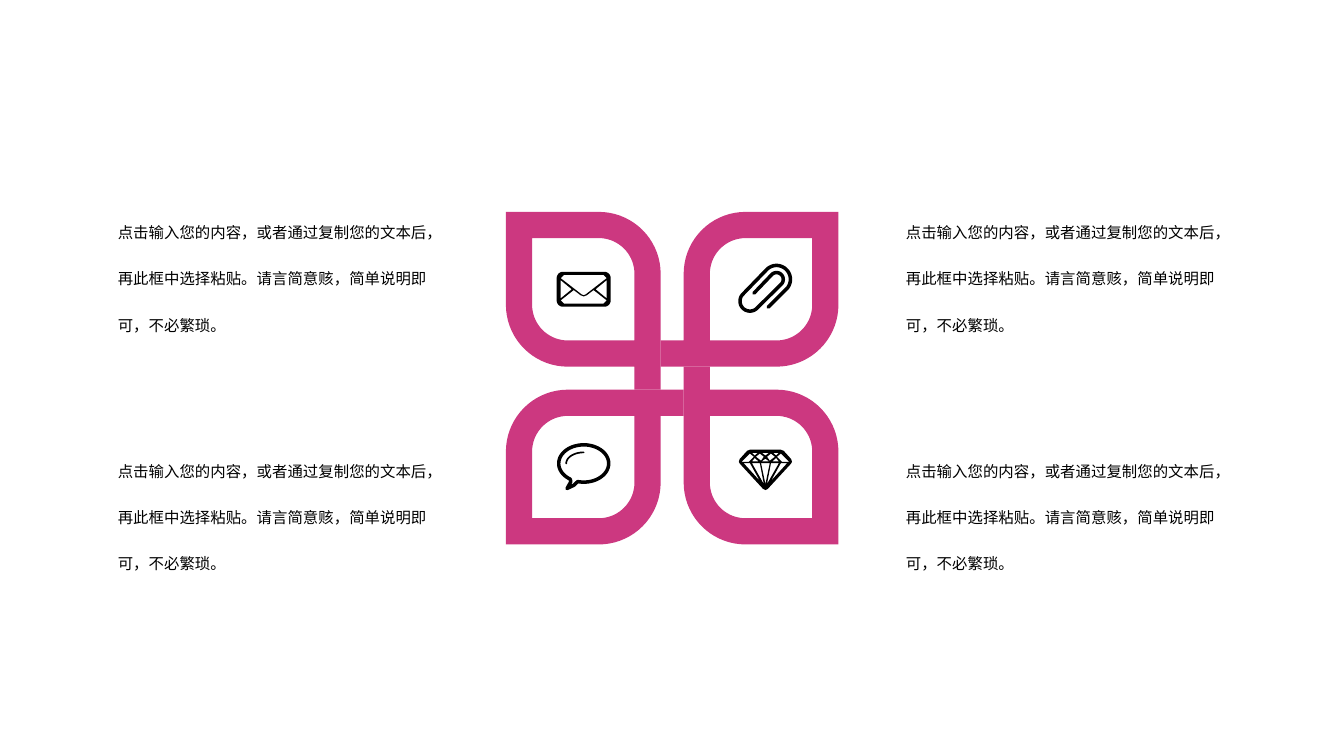
from math import cos, radians, sin

from lxml.etree import SubElement
from pptx import Presentation
from pptx.dml.color import RGBColor
from pptx.enum.text import MSO_AUTO_SIZE as AutoSize
from pptx.oxml.ns import qn
from pptx.util import Cm, Pt

COLORS = {"petal": "CC3880", "ink": "000000"}
FONT = "Noto Sans CJK SC"
BODY = ("点击输入您的内容，或者通过复制您的文本后，再此框中选择粘贴。"
        "请言简意赅，简单说明即可，不必繁琐。")

deck = Presentation()
deck.slide_width, deck.slide_height = Cm(33.87), Cm(19.05)
page = deck.slides.add_slide(deck.slide_layouts[6])


def draw_outline(contours, x, y, color="ink", turns=0, stroke=None, close=True):
    """Draw contours given in cm around (x, y), turned clockwise by quarters.

    A corner is (x, y); an arc is (centre x, centre y, radius x, radius y,
    start, end) in degrees. With a stroke width in points the shape is unfilled.
    """
    builder = None
    for contour in contours:
        points = []
        for part in contour:
            if len(part) == 2:
                points.append(part)
                continue
            center_x, center_y, radius_x, radius_y, start, end = part
            steps = max(12, int(abs(end - start) / 5))
            for step in range(steps + 1):
                angle = radians(start + (end - start) * step / steps)
                points.append((center_x + radius_x * cos(angle),
                               center_y + radius_y * sin(angle)))
        for _ in range(turns):
            points = [(-down, across) for across, down in points]
        points = [(across * 1000, down * 1000) for across, down in points]
        if builder is None:
            builder = page.shapes.build_freeform(*points[0], scale=Cm(0.001))
        else:
            builder.move_to(*points[0])
        builder.add_line_segments(points[1:], close=close)
    shape = builder.convert_to_shape(Cm(x), Cm(y))
    shape.shadow.inherit = False
    paint = RGBColor.from_string(COLORS[color])
    if stroke:
        shape.fill.background()
        shape.line.color.rgb = paint
        shape.line.width = Pt(stroke)
        line = shape.element.spPr.find(qn("a:ln"))
        line.set("cap", "rnd")
        SubElement(line, qn("a:round"))
    else:
        shape.fill.solid()
        shape.fill.fore_color.rgb = paint
        shape.line.fill.background()


def add_text(text, *, left, top, width, height, size, spacing, color="ink"):
    box = page.shapes.add_textbox(Cm(left), Cm(top), Cm(width), Cm(height))
    box.text_frame.word_wrap = True
    box.text_frame.auto_size = AutoSize.SHAPE_TO_FIT_TEXT
    para = box.text_frame.paragraphs[0]
    para.line_spacing = spacing
    span = para.add_run()
    span.text = text
    span.font.name = FONT
    span.font.size = Pt(size)
    span.font.color.rgb = RGBColor.from_string(COLORS[color])
    SubElement(span.font._element, qn("a:ea"), typeface=FONT)


# Four interlocking petals, each a quarter turn of the first
petal = [
    [(-4.19, -4.19), (-1.85, -2.63, 1.56, 1.56, -90, 0), (-0.29, 0.29),
     (-0.95, 0.29), (-0.95, -0.29), (-2.63, -1.85, 1.56, 1.56, 90, 180)],
    [(-3.53, -3.53), (-1.85, -2.63, 0.9, 0.9, -90, 0), (-0.95, -0.95),
     (-2.63, -1.85, 0.9, 0.9, 90, 180)],
]
for turns in range(4):
    draw_outline(petal, 16.94, 9.53, color="petal", turns=turns)

# Paper clip
clip = [(0.09, 0.48), (0.3, -0.22, 0.35, 0.35, 45, -135),
        (-0.37, 0.33, 0.25, 0.25, 225, 45),
        (0.3, -0.22, 0.17, 0.17, 45, -135), (-0.27, 0.13)]
draw_outline([clip], 19.27, 7.26, stroke=2.5, close=False)

# Envelope: rounded body with four open panels
envelope = [
    [(0.52, -0.28, 0.16, 0.16, -90, 0), (0.52, 0.28, 0.16, 0.16, 0, 90),
     (-0.52, 0.28, 0.16, 0.16, 90, 180), (-0.52, -0.28, 0.16, 0.16, 180, 270)],
    [(-0.58, -0.28), (-0.5, -0.36), (0.5, -0.36), (0.58, -0.28),
     (0.05, 0.13), (0, 0.15), (-0.05, 0.13)],
    [(0.58, 0.28), (0.5, 0.36), (-0.5, 0.36), (-0.58, 0.28), (-0.25, 0.02),
     (-0.08, 0.15), (0, 0.18), (0.08, 0.15), (0.25, 0.02)],
]
for side in (-1, 1):
    envelope.append([(side * 0.58, -0.23), (side * 0.3, 0), (side * 0.58, 0.23)])
draw_outline(envelope, 14.71, 7.29)

# Speech bubble with its highlight
bubble = [(0, 0, 0.63, 0.47, 104, -238), (-0.33, 0.47), (-0.42, 0.63), (-0.25, 0.55)]
draw_outline([[(0, 0, 0.44, 0.28, 180, 270)]], 14.71, 11.68, stroke=1.2, close=False)
draw_outline([bubble], 14.71, 11.68, stroke=2.5)

# Diamond: solid outline with facets cut out, the side ones mirrored
rim = [(0, 0.51), (0.06, 0.48), (0.64, -0.15), (0.67, -0.2), (0.65, -0.27),
       (0.46, -0.48), (0.38, -0.51)]
side_facets = [
    [(-0.39, -0.41), (-0.29, -0.33), (-0.42, -0.2), (-0.6, -0.2)],
    [(-0.14, 0.28), (-0.55, -0.17), (-0.39, -0.17)],
    [(-0.14, -0.17), (-0.04, 0.36), (-0.34, -0.17)],
    [(-0.27, -0.3), (-0.17, -0.21), (-0.34, -0.21)],
    [(-0.27, -0.36), (-0.34, -0.43), (-0.19, -0.43)],
    [(-0.11, -0.23), (-0.24, -0.33), (-0.14, -0.41), (-0.04, -0.33)],
]
diamond = [
    rim + [(-across, down) for across, down in reversed(rim[1:])],
    [(0, -0.36), (-0.09, -0.43), (0.09, -0.43)],
    [(-0.1, -0.21), (0, -0.28), (0.1, -0.21)],
    [(-0.11, -0.17), (0, 0.36), (0.11, -0.17)],
]
for facet in side_facets:
    diamond += [facet, [(-across, down) for across, down in facet]]
draw_outline(diamond, 19.29, 11.84)

# Descriptions beside the petals
for left in (2.72, 22.58):
    for top in (4.8, 10.82):
        add_text(BODY, left=left, top=top, width=8.64, height=3.58,
                 size=11, spacing=2.5)

deck.save("out.pptx")
